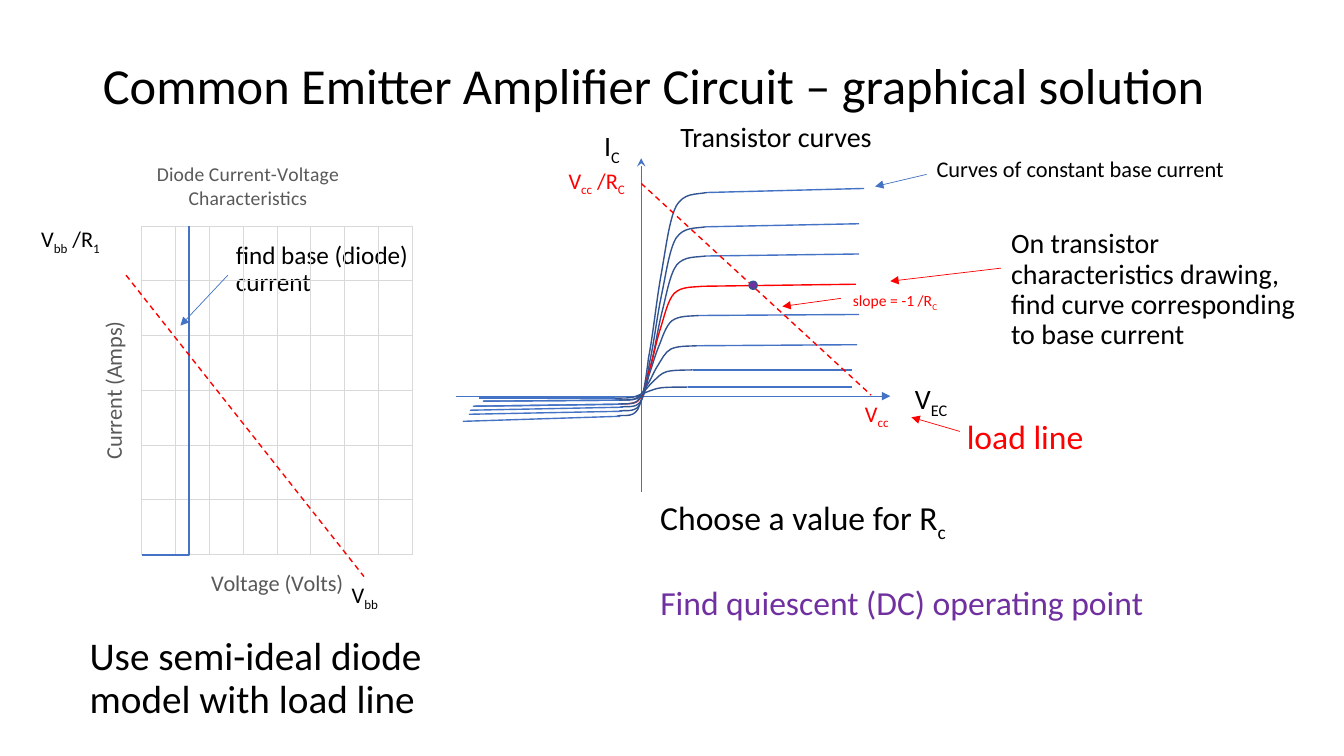
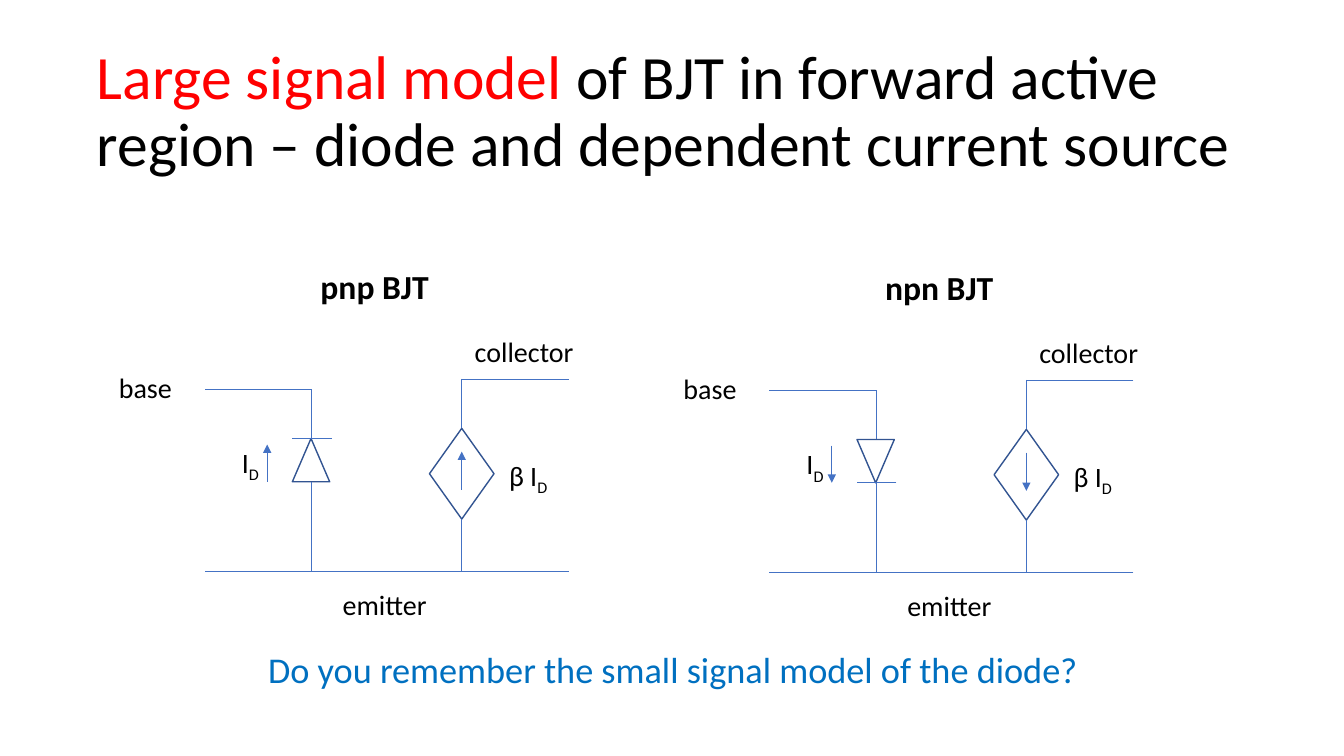
from lxml.etree import SubElement
from pptx import Presentation
from pptx.chart.data import XyChartData
from pptx.dml.color import RGBColor
from pptx.enum.chart import XL_CHART_TYPE
from pptx.enum.dml import MSO_LINE
from pptx.enum.shapes import MSO_CONNECTOR, MSO_SHAPE
from pptx.enum.text import MSO_ANCHOR, PP_ALIGN
from pptx.oxml import parse_xml
from pptx.oxml.ns import nsdecls, qn
from pptx.util import Emu, Pt

PX = 9144  # 100 px to the inch
FONT = "Calibri"
COLORS = {
    "black": "000000", "red": "FF0000", "purple": "7030A0", "sky": "0070C0",
    "blue": "4472C4", "navy": "325491", "gray": "595959", "grid": "D9D9D9",
}

# Unit profile of a transistor curve: a start point, then cubic control points
KNEE = [
    (1, 0), (.87, .01), (.75, 0), (.66, .06),
    (.58, .12), (.54, .26), (.49, .37),
    (.44, .48), (.4, .64), (.35, .74),
    (.32, .84), (.29, .92), (.23, .97),
    (.17, 1.01), (.05, .99), (0, 1),
]
# Knee left, top, width, height; right end x, y; left end x, y
TRANSISTOR_CURVES = [
    (612, 191, 89, 222, 857, 187, 459, 418),
    (614, 225, 86, 183, 852, 222, 465, 411),
    (615, 254, 85, 150, 852, 252, 466, 407),
    (614, 284, 83, 117, 849, 282, 469, 403),
    (613, 313, 81, 88, 852, 312, 471, 403),
    (614, 343, 78, 54, 850, 342, 479, 398),
    (611, 367, 76, 30, 845, 367, 480, 398),
    (607, 384, 75, 11, 845, 384, 475, 395),
]
BASE_CURRENT_CURVE = 3


def px(*values):
    return [Emu(round(v * PX)) for v in values]


def rgb(name):
    return RGBColor.from_string(COLORS[name])


def style_font(font, size, color="black", bold=False):
    font.name, font.size, font.bold = FONT, Pt(size), bold
    font.color.rgb = rgb(color)


def add_runs(p, text, **font):
    """Add text to a paragraph; every second part between bars is a subscript."""
    for i, part in enumerate(text.split("|")):
        if part:
            r = p.add_run()
            r.text = part
            style_font(r.font, **font)
            if i % 2:
                r.font._element.set("baseline", "-25000")


def add_text(slide, box, text, size=20, color="black", bold=False, align=PP_ALIGN.LEFT):
    tf = slide.shapes.add_textbox(*px(*box)).text_frame
    tf.word_wrap = True
    p = tf.paragraphs[0]
    p.alignment, p.line_spacing, p.space_before = align, 0.9, Pt(10)
    add_runs(p, text, size=size, color=color, bold=bold)


def add_titled_slide(prs, box, parts, size):
    """Add a slide whose title is made of (text, color) parts."""
    slide = prs.slides.add_slide(prs.slide_layouts[5])
    title = slide.shapes.title
    title.left, title.top, title.width, title.height = px(*box)
    tf = title.text_frame
    tf.word_wrap, tf.vertical_anchor = True, MSO_ANCHOR.MIDDLE
    p = tf.paragraphs[0]
    p.alignment, p.line_spacing = PP_ALIGN.LEFT, 0.9
    for text, color in parts:
        add_runs(p, text, size=size, color=color)
    return slide


def add_line(slide, start, end, color="blue", width=0.5, dash=False, head=None, tail=None):
    """Draw a straight connector; head and tail are arrowheads at start and end."""
    line = slide.shapes.add_connector(MSO_CONNECTOR.STRAIGHT, *px(*start, *end))
    line.line.color.rgb = rgb(color)
    line.line.width = Pt(width)
    if dash:
        line.line.dash_style = MSO_LINE.DASH
    ln = line.line._get_or_add_ln()
    for tag, kind in (("a:headEnd", head), ("a:tailEnd", tail)):
        if kind:
            SubElement(ln, qn(tag)).set("type", kind)
    SubElement(line._element.spPr, qn("a:effectLst"))
    return line


def add_outline(sp, color="navy", fill=None):
    sp.shadow.inherit = False
    sp.line.color.rgb = rgb(color)
    sp.line.width = Pt(1)
    if fill:
        sp.fill.solid()
        sp.fill.fore_color.rgb = rgb(fill)
    else:
        sp.fill.background()
    return sp


def add_shape(slide, kind, box, fill=None):
    return add_outline(slide.shapes.add_shape(kind, *px(*box)), fill=fill)


def add_bezier(slide, controls, color):
    """Draw a chain of cubic curves through every third control point."""
    builder = slide.shapes.build_freeform(*controls[0])
    builder.add_line_segments(controls[1:], close=False)
    sp = add_outline(builder.convert_to_shape(), color)
    outline = next(sp._element.iter(qn("a:path")))
    segments = outline.findall(qn("a:lnTo"))
    for i in range(0, len(segments), 3):
        cubic = SubElement(outline, qn("a:cubicBezTo"))
        for segment in segments[i:i + 3]:
            cubic.append(segment[0])
            outline.remove(segment)


def add_transistor_curve(slide, curve, selected):
    left, top, width, height, end_x, end_y, tail_x, tail_y = curve
    controls = [px(left + x * width, top + y * height) for x, y in KNEE]
    add_bezier(slide, controls, "red" if selected else "navy")
    add_line(slide, (left + width, top), (end_x, end_y), "red" if selected else "blue", 1)
    add_line(slide, (tail_x, tail_y), (left + 3, top + height), width=1)


def style_axis(axis, title, maximum, major):
    axis.minimum_scale, axis.maximum_scale, axis.major_unit = 0, maximum, major
    axis.has_major_gridlines = True
    line = axis.major_gridlines.format.line
    line.color.rgb = rgb("grid")
    line.width = Pt(0.75)
    axis.axis_title.text_frame.text = title
    style_font(axis.axis_title.text_frame.paragraphs[0].runs[0].font, 16, "gray")
    axis.visible = False


def add_diode_chart(slide):
    data = XyChartData()
    series = data.add_series("Series 1")
    for i in range(16):
        series.add_data_point(round(-0.05 + i * 0.05, 2), 0)
    series.add_data_point(0.7, 10)
    series.add_data_point(0.75, 100)
    chart = slide.shapes.add_chart(
        XL_CHART_TYPE.XY_SCATTER_SMOOTH_NO_MARKERS, *px(76, 141, 340, 476), data).chart
    style_font(chart.font, 10)
    chart.has_legend = False
    chart.has_title = True
    tf = chart.chart_title.text_frame
    tf.text = "Diode Current-Voltage Characteristics"
    style_font(tf.paragraphs[0].runs[0].font, 14, "gray")
    style_axis(chart.category_axis, "Voltage (Volts)", 4, 0.5)
    style_axis(chart.value_axis, "Current (Amps)", 3e-6, 5e-7)
    plot = chart.plots[0]
    plot.vary_by_categories = False
    diode = plot.series[0]
    diode.smooth = True
    diode.format.line.color.rgb = rgb("blue")
    diode.format.line.width = Pt(1.5)
    area = chart._chartSpace.chart.plotArea
    for old in area.findall(qn("c:layout")):
        area.remove(old)
    area.insert(0, parse_xml(
        f'<c:layout {nsdecls("c")}><c:manualLayout><c:layoutTarget val="inner"/>'
        '<c:xMode val="edge"/><c:yMode val="edge"/><c:x val="0.19"/><c:y val="0.175"/>'
        '<c:w val="0.79"/><c:h val="0.685"/></c:manualLayout></c:layout>'))


def add_graphical_solution(prs):
    slide = add_titled_slide(
        prs, (92, 40, 1150, 95),
        [("Common Emitter Amplifier Circuit – graphical solution", "black")], 36)

    # Diode load line
    add_text(slide, (224, 236, 212, 74), "find base (diode) current", 18)
    add_text(slide, (79, 627, 368, 109), "Use semi-ideal diode model with load line", 28)
    add_text(slide, (31, 219, 95, 54), "V|bb| /R|1", 16)
    add_diode_chart(slide)
    add_line(slide, (125, 273), (361, 572), "red", 1, dash=True)
    add_text(slide, (339, 572, 67, 37), "V|bb", 16)
    add_line(slide, (226, 273), (179, 323), tail="triangle")

    # Transistor characteristics
    add_line(slide, (636, 157), (636, 488), head="stealth")
    add_line(slide, (452, 393), (883, 393), tail="triangle")
    add_text(slide, (588, 123, 38, 48), "I|C", align=PP_ALIGN.CENTER)
    add_text(slide, (831, 374, 185, 48), "V|EC", align=PP_ALIGN.CENTER)
    for i, curve in enumerate(TRANSISTOR_CURVES):
        add_transistor_curve(slide, curve, i == BASE_CURRENT_CURVE)
    add_line(slide, (636, 182), (864, 392), "red", 1, dash=True)
    add_shape(slide, MSO_SHAPE.OVAL, (743, 279, 8, 8), fill="purple")

    for box, text, size, color in [
        ((665, 117, 235, 45), "Transistor curves", 20, "black"),
        ((919, 152, 361, 43), "Curves of constant base current", 16, "black"),
        ((993, 223, 304, 136), "On transistor characteristics drawing, "
                               "find curve corresponding to base current", 20, "black"),
        ((949, 412, 211, 48), "load line", 24, "red"),
        ((554, 161, 92, 54), "V|cc| /R|C", 16, "red"),
        ((836, 284, 108, 32), "slope = -1 /R|C", 11.1, "red"),
        ((848, 392, 59, 39), "V|cc", 16, "red"),
        ((645, 489, 424, 57), "Choose a value for R|c", 24, "black"),
        ((645, 577, 515, 57), "Find quiescent (DC) operating point", 24, "purple"),
    ]:
        add_text(slide, box, text, size, color)
    for start, end, color in [
        ((919, 173), (868, 185), "blue"),
        ((993, 266), (883, 279), "red"),
        ((834, 296), (776, 304), "red"),
        ((952, 428), (904, 414), "red"),
    ]:
        add_line(slide, start, end, color, tail="triangle")


def add_bjt_model(slide, name, dx, dy, up):
    """Draw one transistor model, with its current pointing up or down."""
    def at(x, y, *size):
        return (x + dx, y + dy, *size)

    def wire(start, end, **kw):
        return add_line(slide, at(*start), at(*end), **kw)

    def arrow(x, top, bottom):
        start, end = (bottom, top) if up else (top, bottom)
        wire((x, start), (x, end), tail="triangle")

    diode = add_shape(slide, MSO_SHAPE.ISOSCELES_TRIANGLE, at(290, 435, 37, 43))
    diode.rotation = 0 if up else 180
    bar = 435 if up else 478
    wire((329, bar), (290, bar))
    wire((309, 478), (309, 567))
    wire((309, 386), (309, 435))
    wire((309, 386), (203, 386))
    wire((564, 567), (203, 567))
    arrow(265, 441, 478)

    source = add_shape(slide, MSO_SHAPE.DIAMOND, at(426, 425, 64, 90))
    wire((458, 376), (458, 425)).end_connect(source, 0)
    wire((458, 515), (458, 567)).begin_connect(source, 2)
    wire((564, 376), (458, 376))
    arrow(458, 448, 486)

    for box, text in [
        ((230, 438, 61, 44), "I|D"),
        ((495, 450, 61, 44), "β I|D"),
        ((108, 366, 111, 41), "base"),
        ((330, 582, 111, 41), "emitter"),
        ((461, 331, 127, 44), "collector"),
    ]:
        add_text(slide, at(*box), text)
    add_text(slide, at(308, 263, 141, 57), name, 24, bold=True)


def add_large_signal_model(prs):
    slide = add_titled_slide(
        prs, (86, 40, 1161, 144),
        [("Large signal model ", "red"),
         ("of BJT in forward active region – diode and dependent current source", "black")], 44)
    add_bjt_model(slide, "pnp BJT", 0, 0, up=True)
    add_bjt_model(slide, "npn BJT", 560, 1, up=False)
    add_text(slide, (256, 642, 841, 53),
             "Do you remember the small signal model of the diode?", 25.9, "sky")


def main():
    prs = Presentation()
    prs.slide_width, prs.slide_height = px(1333, 750)
    add_graphical_solution(prs)
    add_large_signal_model(prs)
    prs.save("out.pptx")


if __name__ == "__main__":
    main()
